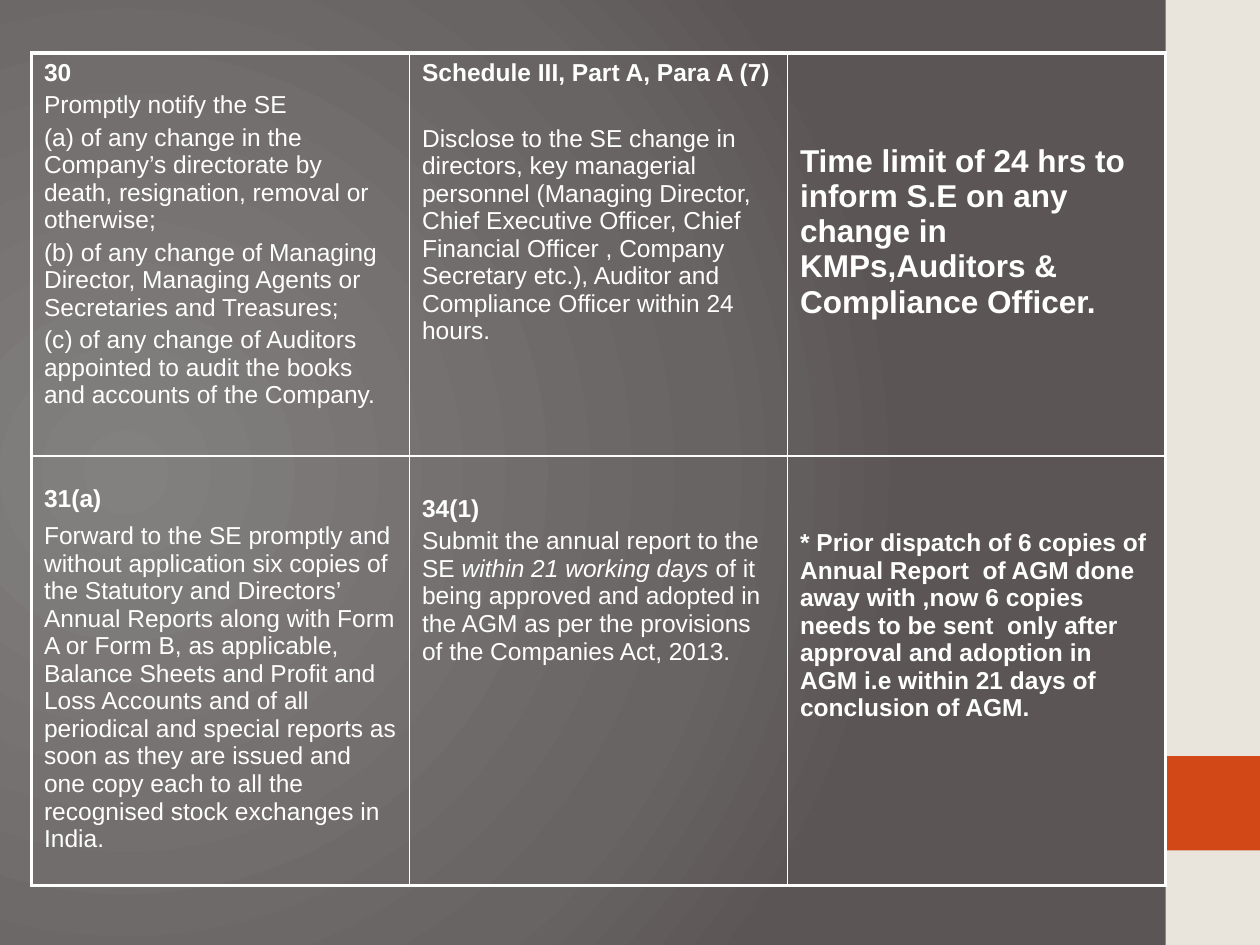
import pptx
import pptx.dml.color
import pptx.enum.shapes
import pptx.oxml
import pptx.oxml.ns
import pptx.util

NS = 'xmlns:a="http://schemas.openxmlformats.org/drawingml/2006/main"'


def rgb(value):
    return pptx.dml.color.RGBColor.from_string(value)


def add_text(p, text, size=14, bold=False, italic=False, color="FFFFFF", font="Arial"):
    r = p.add_run()
    r.text = text
    r.font.name, r.font.size = font, pptx.util.Pt(size)
    r.font.bold, r.font.italic = bold, italic
    r.font.color.rgb = rgb(color)


def para(*runs, gap=2.8, **fmt):
    """Describe a paragraph: runs are texts or (text, format) pairs, gap is the space before."""
    pairs = [(run, {}) if isinstance(run, str) else run for run in runs]
    return gap, [(text, {**fmt, **own}) for text, own in pairs]


class Deck:
    """Holds the style and the current slide; lengths are shares of the slide's size."""
    line = "FFFFFF"
    outer, inner = 2.25, 1

    def __init__(self, width, height):
        self.prs = pptx.Presentation()
        self.prs.slide_width = pptx.util.Inches(width)
        self.prs.slide_height = pptx.util.Inches(height)
        self.s = self.prs.slides.add_slide(self.prs.slide_layouts[6])

    def box(self, x, y, w, h):
        W, H = self.prs.slide_width, self.prs.slide_height
        return round(x * W), round(y * H), round(w * W), round(h * H)

    def radial_background(self, stops, left, top, right, bottom):
        self.s.background.fill.gradient()
        old = next(self.s.element.iter(pptx.oxml.ns.qn("a:gradFill")))
        gs = "".join(f'<a:gs pos="{pos * 1000}"><a:srgbClr val="{c}"/></a:gs>' for pos, c in stops)
        old.getparent().replace(old, pptx.oxml.parse_xml(
            f'<a:gradFill {NS} rotWithShape="1"><a:gsLst>{gs}</a:gsLst><a:path path="circle">'
            f'<a:fillToRect l="{left * 1000}" t="{top * 1000}" r="{right * 1000}" '
            f'b="{bottom * 1000}"/></a:path></a:gradFill>'))

    def block(self, x, y, w, h, color):
        sp = self.s.shapes.add_shape(pptx.enum.shapes.MSO_SHAPE.RECTANGLE, *self.box(x, y, w, h))
        sp.shadow.inherit = False
        sp.fill.solid()
        sp.fill.fore_color.rgb = rgb(color)
        sp.line.fill.background()

    def borders(self, cell, left, right, top, bottom):
        """Set border widths in points; a true flag marks an outer edge."""
        tcPr = cell._tc.get_or_add_tcPr()
        for i, (side, edge) in enumerate(zip("LRTB", (left, right, top, bottom))):
            width = pptx.util.Pt(self.outer if edge else self.inner)
            tcPr.insert(i, pptx.oxml.parse_xml(
                f'<a:ln{side} {NS} w="{width}"><a:solidFill><a:srgbClr val="{self.line}"/>'
                f'</a:solidFill></a:ln{side}>'))

    def fill_cell(self, cell, top_inset, paragraphs):
        cell.fill.background()
        cell.margin_top = pptx.util.Inches(top_inset)
        tf = cell.text_frame
        for i, (gap, runs) in enumerate(paragraphs):
            p = tf.add_paragraph() if i else tf.paragraphs[0]
            p.space_before = pptx.util.Pt(gap if i else 0)
            for text, fmt in runs:
                add_text(p, text, **fmt)

    def table(self, x, y, w, row_heights, rows):
        last_row, last_col = len(rows) - 1, len(rows[0]) - 1
        frame = self.s.shapes.add_table(len(rows), len(rows[0]),
                                        *self.box(x, y, w, sum(row_heights)))
        tbl = frame.table
        tbl.first_row = tbl.horz_banding = False
        for r, row in enumerate(rows):
            tbl.rows[r].height = round(row_heights[r] * self.prs.slide_height)
            for c, (top_inset, paragraphs) in enumerate(row):
                cell = tbl.cell(r, c)
                self.fill_cell(cell, top_inset, paragraphs)
                self.borders(cell, c == 0, c == last_col, r == 0, r == last_row)


# Each cell is its top inset in inches and its paragraphs.
ROWS = [
    [
        (0.05, [
            para("30", bold=True),
            para("Promptly notify the SE"),
            para("(a) of any change in the Company’s directorate by death, resignation, "
                 "removal or otherwise;"),
            para("(b) of any change of Managing Director, Managing Agents or Secretaries "
                 "and Treasures;"),
            para("(c) of any change of Auditors appointed to audit the books and accounts "
                 "of the Company."),
        ]),
        (0.05, [
            para("Schedule III, Part A, Para A (7)", bold=True),
            para("Disclose to the SE change in directors, key managerial personnel (Managing "
                 "Director, Chief Executive Officer, Chief Financial Officer , Company Secretary "
                 "etc.), Auditor and Compliance Officer within 24  hours.", gap=21.7),
        ]),
        (0.72, [
            para("Time limit of 24 hrs to inform S.E on any change in KMPs,Auditors & "
                 "Compliance Officer.", size=18, bold=True),
        ]),
    ],
    [
        (0.23, [
            para("31(a)", bold=True),
            para("Forward to the SE promptly and without application six copies of the Statutory "
                 "and Directors’ Annual Reports along with Form A or Form B, as applicable, "
                 "Balance Sheets and Profit and Loss Accounts and of all periodical and special "
                 "reports as soon as they are issued and one copy each to all the recognised "
                 "stock exchanges in India.", gap=5.6),
        ]),
        (0.31, [
            para("34(1)", bold=True),
            para("Submit the annual report to the SE",
                 (" within 21 working days", {"italic": True}),
                 " of it being approved and adopted in the AGM as per the provisions of the "
                 "Companies Act, 2013."),
        ]),
        (0.58, [
            para("* Prior dispatch of 6 copies of Annual Report  of AGM done away with ,now "
                 "6 copies needs to be sent  only after approval and adoption in AGM i.e within "
                 "21 days of conclusion of AGM.", bold=True),
        ]),
    ],
]


def main():
    deck = Deck(10, 7.5)
    deck.radial_background([(0, "838080"), (75, "696464"), (100, "5B5555")], 20, 50, 100, 50)
    side = 0.925
    deck.block(side, 0, 1 - side, 1, "E9E5DC")
    deck.block(side, 0.8, 1 - side, 0.1, "D34817")
    deck.table(0.025, 0.42 / 7.5, 0.9, [3.2 / 7.5, 3.41 / 7.5], ROWS)
    deck.prs.save("out.pptx")


if __name__ == "__main__":
    main()
